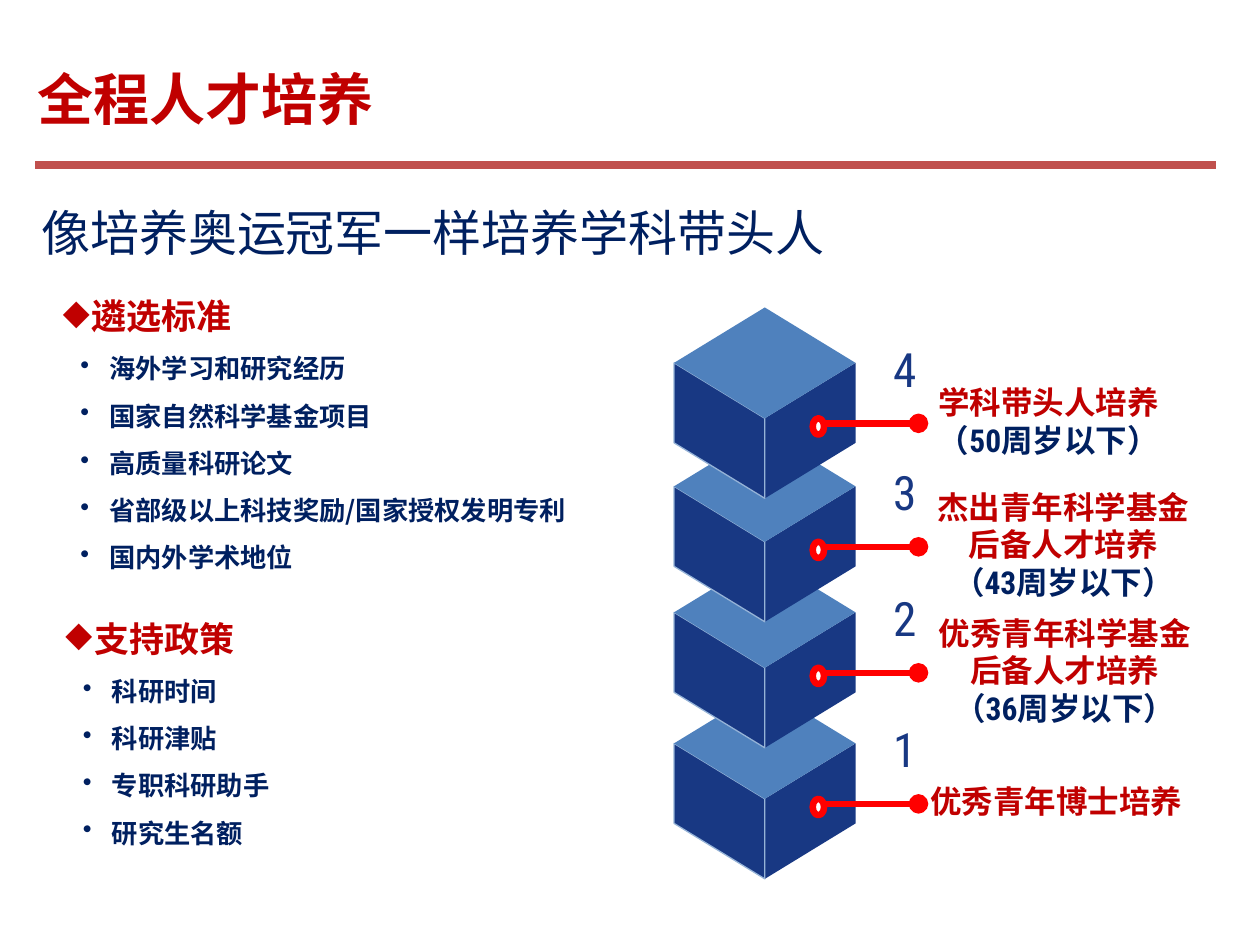
from lxml import etree
from pptx import Presentation
from pptx.dml.color import RGBColor
from pptx.enum.shapes import MSO_CONNECTOR, MSO_SHAPE
from pptx.enum.text import MSO_ANCHOR, PP_ALIGN
from pptx.oxml.ns import qn
from pptx.util import Inches, Pt

STRAIGHT = MSO_CONNECTOR.STRAIGHT
OVAL = MSO_SHAPE.OVAL
TOP, MIDDLE = MSO_ANCHOR.TOP, MSO_ANCHOR.MIDDLE
CENTER = PP_ALIGN.CENTER

RED = RGBColor(0xC0, 0x00, 0x00)
RULE_RED = RGBColor(0xC0, 0x50, 0x4D)
BRIGHT_RED = RGBColor(0xFF, 0x00, 0x00)
NAVY = RGBColor(0x00, 0x20, 0x60)
CUBE_SIDE = RGBColor(0x18, 0x38, 0x83)
CUBE_TOP = RGBColor(0x4F, 0x81, 0xBD)
CUBE_EDGE = RGBColor(0x95, 0xB3, 0xD7)
WHITE = RGBColor(0xFF, 0xFF, 0xFF)

CJK_FONT = "Noto Sans CJK SC"
LATIN_FONT = "Roboto Condensed"
LINE_HEIGHT = 1.2

# The slide is a grid of 100 columns by 75 rows with square cells.
COLUMNS, ROWS = 100, 75
CELL = Inches(10) / COLUMNS

CUBE_LEFT, CUBE_MIDDLE, CUBE_RIGHT = 53.5, 60.7, 67.9
CUBE_SLOPE, CUBE_HEIGHT = 4.4, 6.35

CRITERIA = ["海外学习和研究经历", "国家自然科学基金项目", "高质量科研论文",
            "省部级以上科技奖励/国家授权发明专利", "国内外学术地位"]
POLICIES = ["科研时间", "科研津贴", "专职科研助手", "研究生名额"]

# Number, row of the cube's side corners, label width, label, age limit
LEVELS = [
    ("1", 59, 21.7, ["优秀青年博士培养"], None),
    ("2", 48.6, 23, ["优秀青年科学基金", "后备人才培养"], "（36周岁以下）"),
    ("3", 38.6, 22.8, ["杰出青年科学基金", "后备人才培养"], "（43周岁以下）"),
    ("4", 28.8, 20.4, ["学科带头人培养"], "（50周岁以下）"),
]


def cells(*counts):
    return [round(count * CELL) for count in counts]


def add_text_box(slide, left, top, width, height, anchor=TOP, wrap=True):
    box = slide.shapes.add_textbox(*cells(left, top, width, height))
    frame = box.text_frame
    frame.word_wrap = wrap
    frame.vertical_anchor = anchor
    return frame


def add_paragraph(frame, text, size, color, bold=False, latin=CJK_FONT):
    """Fill the empty first paragraph, or append one."""
    first = frame.paragraphs[0]
    paragraph = frame.add_paragraph() if first.runs else first
    paragraph.add_run().text = text
    paragraph.line_spacing = Pt(size * LINE_HEIGHT)
    font = paragraph.font
    font.size, font.bold, font.name = Pt(size), bold, latin
    font.color.rgb = color
    east_asian = etree.Element(qn("a:ea"), typeface=CJK_FONT)
    font._element.find(qn("a:latin")).addnext(east_asian)
    return paragraph


def add_bullet(paragraph, character, indent):
    properties = paragraph._p.get_or_add_pPr()
    properties.set("marL", str(cells(indent)[0]))
    properties.set("indent", str(cells(-2.3)[0]))
    bullet = etree.Element(qn("a:buChar"), char=character)
    properties.find(qn("a:defRPr")).addprevious(bullet)


def add_bullet_list(slide, left, top, height, heading, items):
    frame = add_text_box(slide, left, top, 47.4, height)
    add_bullet(add_paragraph(frame, heading, 20, RED, True), "◆", 2.3)
    for item in items:
        paragraph = add_paragraph(frame, item, 15, NAVY, True)
        paragraph.level = 1
        paragraph.space_before = Pt(9)
        add_bullet(paragraph, "•", 3.7)


def add_line(slide, start, end, color, width, tail=None):
    line = slide.shapes.add_connector(STRAIGHT, *cells(*start, *end))
    line.line.color.rgb = color
    line.line.width = Pt(width)
    if tail:
        etree.SubElement(line.line._get_or_add_ln(), qn("a:tailEnd"), type=tail)
    etree.SubElement(line._element.spPr, qn("a:effectLst"))


def add_face(slide, points, fill, edge=None):
    corners = [cells(*point) for point in points]
    builder = slide.shapes.build_freeform(*corners[0])
    builder.add_line_segments(corners[1:], close=True)
    face = builder.convert_to_shape()
    face.shadow.inherit = False
    face.fill.solid()
    face.fill.fore_color.rgb = fill
    if edge:
        face.line.color.rgb = edge
        face.line.width = Pt(0.75)
    else:
        face.line.fill.background()


def add_cube(slide, corner):
    """Draw a cube whose left and right upper corners lie on the given row."""
    front = corner + CUBE_SLOPE
    for side, edge in ((CUBE_RIGHT, None), (CUBE_LEFT, CUBE_EDGE)):
        add_face(slide, [(side, corner), (CUBE_MIDDLE, front),
                         (CUBE_MIDDLE, front + CUBE_HEIGHT),
                         (side, corner + CUBE_HEIGHT)], CUBE_SIDE, edge)
    add_face(slide, [(CUBE_MIDDLE, corner - CUBE_SLOPE), (CUBE_LEFT, corner),
                     (CUBE_MIDDLE, front), (CUBE_RIGHT, corner)], CUBE_TOP)


def add_pointer(slide, corner):
    row = corner + 4.8
    add_line(slide, (65.4, row), (72.9, row), BRIGHT_RED, 3.75, "oval")
    ring = slide.shapes.add_shape(OVAL, *cells(64.5, row - 0.4, 0.9, 1.3))
    ring.shadow.inherit = False
    ring.fill.solid()
    ring.fill.fore_color.rgb = WHITE
    ring.line.color.rgb = BRIGHT_RED
    ring.line.width = Pt(3.75)


def add_level(slide, number, corner, width, lines, age_limit):
    add_cube(slide, corner)
    add_pointer(slide, corner)
    frame = add_text_box(slide, 69.9, corner - 2.3, 3.9, 7.9, wrap=False)
    add_paragraph(frame, number, 27, CUBE_SIDE, latin=LATIN_FONT)
    height = 14
    label = add_text_box(slide, 73, corner + 4.6 - height / 2, width, height, MIDDLE)
    label.margin_left = label.margin_right = cells(0.7)[0]
    for line in lines:
        add_paragraph(label, line, 18, RED, True, LATIN_FONT).alignment = CENTER
    if age_limit:
        paragraph = add_paragraph(label, age_limit, 18, NAVY, True, LATIN_FONT)
        paragraph.alignment = CENTER


def main():
    presentation = Presentation()
    presentation.slide_width, presentation.slide_height = cells(COLUMNS, ROWS)
    slide = presentation.slides.add_slide(presentation.slide_layouts[6])

    add_line(slide, (2.8, 13.1), (96.5, 13.1), RULE_RED, 4.5)
    title = add_text_box(slide, 2, 4.7, 71.7, 6.1, MIDDLE)
    add_paragraph(title, "全程人才培养", 32, RED, True)
    add_bullet_list(slide, 4, 22.9, 23.1, "遴选标准", CRITERIA)
    add_bullet_list(slide, 4.2, 48.5, 19.5, "支持政策", POLICIES)
    for level in LEVELS:
        add_level(slide, *level)
    subtitle = add_text_box(slide, 2.3, 15.6, 64.8, 5.7, wrap=False)
    add_paragraph(subtitle, "像培养奥运冠军一样培养学科带头人", 28, NAVY)

    presentation.save("out.pptx")


if __name__ == "__main__":
    main()
